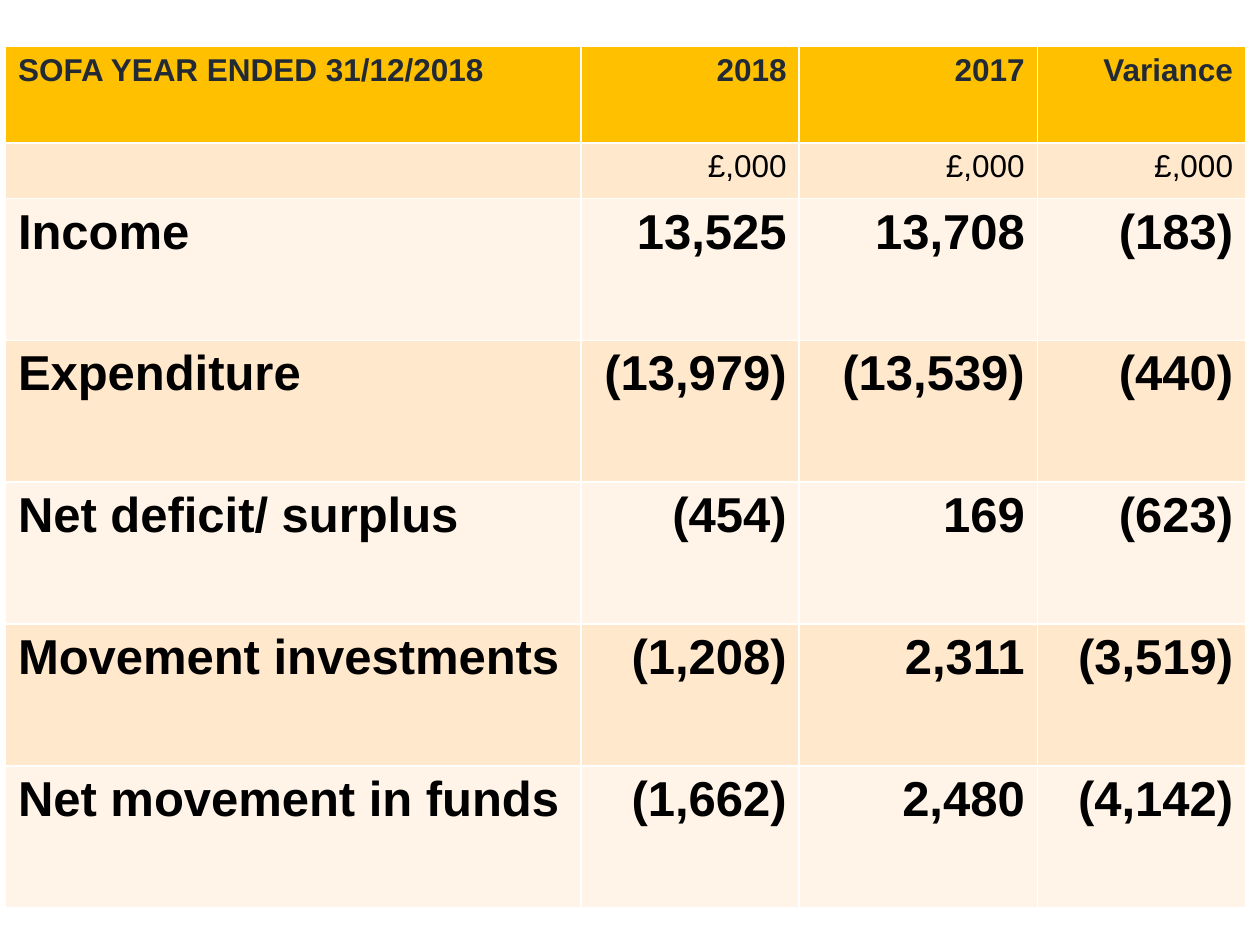
"""Builds a one-slide table of the SOFA figures for the year ended 31/12/2018."""
import pptx
import pptx.dml.color
import pptx.enum.text
import pptx.util

Cm = pptx.util.Cm
Pt = pptx.util.Pt
RGB = pptx.dml.color.RGBColor.from_string
RIGHT = pptx.enum.text.PP_ALIGN.RIGHT

COLORS = {
    "header": "FFC000",
    "header_text": "222A35",
    "text": "000000",
    "dark_band": "FFE8CC",
    "light_band": "FFF4E7",
}
ROWS = [
    ["SOFA YEAR ENDED 31/12/2018", "2018", "2017", "Variance"],
    ["", "£,000", "£,000", "£,000"],
    ["Income", "13,525", "13,708", "(183)"],
    ["Expenditure", "(13,979)", "(13,539)", "(440)"],
    ["Net deficit/ surplus", "(454)", "169", "(623)"],
    ["Movement investments", "(1,208)", "2,311", "(3,519)"],
    ["Net movement in funds", "(1,662)", "2,480", "(4,142)"],
]
COL_WIDTHS = [11.6, 4.4, 4.8, 4.2]
ROW_HEIGHTS = [1.95, 1.12] + [2.86] * 5

prs = pptx.Presentation()
prs.slide_width = Cm(25.4)
prs.slide_height = Cm(19.05)
s = prs.slides.add_slide(prs.slide_layouts[6])

table = s.shapes.add_table(
    len(ROWS), len(COL_WIDTHS), Cm(0.11), Cm(0.93),
    Cm(sum(COL_WIDTHS)), Cm(sum(ROW_HEIGHTS)),
).table
for column, width in zip(table.columns, COL_WIDTHS):
    column.width = Cm(width)
for row, height in zip(table.rows, ROW_HEIGHTS):
    row.height = Cm(height)

for i, values in enumerate(ROWS):
    band = "header" if i == 0 else "dark_band" if i % 2 else "light_band"
    for j, value in enumerate(values):
        cell = table.cell(i, j)
        cell.fill.solid()
        cell.fill.fore_color.rgb = RGB(COLORS[band])
        cell.text = value
        p = cell.text_frame.paragraphs[0]
        p.font.name = "Arial"
        p.font.size = Pt(18 if i < 2 else 28)
        p.font.bold = i != 1
        p.font.color.rgb = RGB(COLORS["header_text" if i == 0 else "text"])
        if j > 0:
            p.alignment = RIGHT

prs.save("out.pptx")
